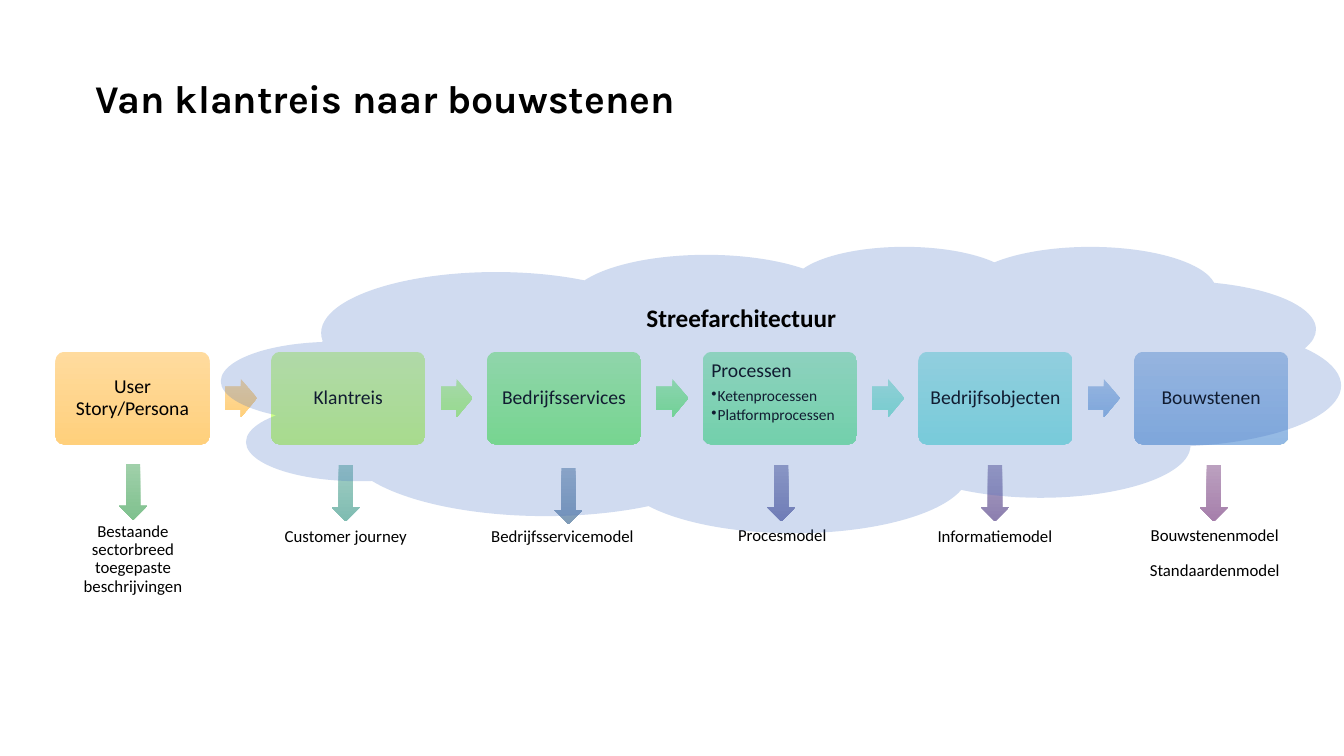
from dataclasses import dataclass

from lxml.etree import SubElement
from pptx import Presentation
from pptx.dml.color import RGBColor
from pptx.enum.shapes import MSO_SHAPE as Preset
from pptx.enum.text import MSO_ANCHOR as Anchor, MSO_AUTO_SIZE as AutoSize, PP_ALIGN as Align
from pptx.oxml.ns import qn
from pptx.util import Pt

BLACK = RGBColor(0x00, 0x00, 0x00)
CLOUD_BLUE = RGBColor(0x44, 0x72, 0xC4)
ORANGE = (RGBColor(0xFF, 0xDB, 0x9E), RGBColor(0xFF, 0xD0, 0x7C))
LIME = (RGBColor(0xD5, 0xFC, 0x9F), RGBColor(0xCA, 0xFF, 0x7D))
LIME_GREEN = (RGBColor(0xC6, 0xFB, 0xA0), RGBColor(0xB4, 0xFD, 0x7D))
GREEN = (RGBColor(0xA9, 0xF7, 0xA2), RGBColor(0x89, 0xF7, 0x80))
SPRING = (RGBColor(0xA4, 0xF4, 0xA9), RGBColor(0x82, 0xF3, 0x88))
MINT = (RGBColor(0xA6, 0xF2, 0xBC), RGBColor(0x84, 0xF0, 0xA4))
AQUA = (RGBColor(0xAA, 0xEE, 0xDD), RGBColor(0x89, 0xEB, 0xD3))
TURQUOISE = (RGBColor(0xAB, 0xED, 0xE7), RGBColor(0x8B, 0xEA, 0xE2))
BLUE = (RGBColor(0xB1, 0xCB, 0xE9), RGBColor(0x93, 0xB9, 0xE4))
MOSS = (RGBColor(0xA0, 0xD0, 0xAA), RGBColor(0x7F, 0xC1, 0x8E))
SEA = (RGBColor(0xA0, 0xCD, 0xC4), RGBColor(0x7F, 0xBC, 0xB1))
STEEL = (RGBColor(0xA0, 0xB4, 0xC9), RGBColor(0x7F, 0x9B, 0xB7))
INDIGO = (RGBColor(0xA0, 0xA2, 0xC5), RGBColor(0x7F, 0x81, 0xB3))
LAVENDER = (RGBColor(0xA9, 0xA0, 0xC2), RGBColor(0x8C, 0x7F, 0xAF))
MAUVE = (RGBColor(0xBB, 0xA0, 0xBF), RGBColor(0xA6, 0x7F, 0xAB))

BODY_FONT = {"name": "Calibri", "size": Pt(14), "bold": False, "color": BLACK}
BULLET_FONT = BODY_FONT | {"size": Pt(11)}
LABEL_FONT = BODY_FONT | {"size": Pt(12)}
CLOUD_FONT = BODY_FONT | {"size": Pt(18), "bold": True}
TITLE_FONT = {"name": "Karla", "size": Pt(28), "bold": True, "color": BLACK}
CENTERED = {"alignment": Align.CENTER, "line_spacing": 0.9}
LEFT = {"alignment": Align.LEFT, "line_spacing": 0.9}


@dataclass
class Stage:
    name: str
    color: tuple
    labels: list
    down_color: tuple
    down_offset: tuple
    label_offset: tuple
    next_color: tuple = None
    bullets: tuple = ()


STAGES = [
    Stage("User Story/Persona", ORANGE, ["Bestaande sectorbreed toegepaste beschrijvingen"],
          MOSS, (45.4, 80), (4.3, 122.5), ORANGE),
    Stage("Klantreis", LIME, ["Customer journey"], SEA, (43.2, 81), (2.2, 126), LIME_GREEN),
    Stage("Bedrijfsservices", GREEN, ["Bedrijfsservicemodel"], STEEL, (48.2, 83), (2.9, 126), SPRING),
    Stage("Processen", MINT, ["Procesmodel"], INDIGO, (46.1, 81), (5.8, 125.5), AQUA,
          ("Ketenprocessen", "Platformprocessen")),
    Stage("Bedrijfsobjecten", TURQUOISE, ["Informatiemodel"], LAVENDER, (44.6, 81), (3.6, 126), BLUE),
    Stage("Bouwstenen", BLUE, ["Bouwstenenmodel", "Standaardenmodel"], MAUVE, (46.8, 81), (6.5, 125.5)),
]


def apply_format(target, values):
    for name, value in values.items():
        setattr(target, name, value)


def format_frame(frame, inset, anchor):
    margins = {f"margin_{side}": Pt(inset) for side in ("left", "top", "right", "bottom")}
    apply_format(frame, margins | {"word_wrap": True, "auto_size": AutoSize.NONE, "vertical_anchor": anchor})


def write_paragraph(paragraph, text, layout, font):
    paragraph.text = text
    apply_format(paragraph, layout)
    apply_format(paragraph.font, {name: value for name, value in font.items() if name != "color"})
    paragraph.font.color.rgb = font["color"]


def add_preset(slide, preset, left, top, width, height):
    shape = slide.shapes.add_shape(preset, Pt(left), Pt(top), Pt(width), Pt(height))
    shape.shadow.inherit = False
    shape.line.fill.background()
    return shape


def fill_gradient(shape, colors):
    shape.fill.gradient()
    shape.fill.gradient_angle = 270
    for stop, color in zip(shape.fill.gradient_stops, colors):
        stop.color.rgb = color


def add_bullet(paragraph):
    properties = paragraph._p.get_or_add_pPr()
    properties.set("marL", str(Pt(4.5)))
    properties.set("indent", str(-Pt(4.5)))
    SubElement(properties, qn("a:buChar"), char="•")


def place_title(slide, left, top, width, height):
    title = slide.shapes.title
    apply_format(title, {"left": Pt(left), "top": Pt(top), "width": Pt(width), "height": Pt(height)})
    format_frame(title.text_frame, 0, Anchor.TOP)
    write_paragraph(title.text_frame.paragraphs[0], "Van klantreis naar bouwstenen", LEFT, TITLE_FONT)


def add_stage_box(slide, stage, left, top, width, height):
    box = add_preset(slide, Preset.ROUNDED_RECTANGLE, left, top, width, height)
    box.adjustments[0] = 0.1
    fill_gradient(box, stage.color)
    frame = box.text_frame
    format_frame(frame, 4.25, Anchor.TOP if stage.bullets else Anchor.MIDDLE)
    layout = LEFT | {"space_after": Pt(5)} if stage.bullets else CENTERED
    write_paragraph(frame.paragraphs[0], stage.name, layout, BODY_FONT)
    for text in stage.bullets:
        paragraph = frame.add_paragraph()
        add_bullet(paragraph)
        write_paragraph(paragraph, text, LEFT | {"space_after": Pt(1.65)}, BULLET_FONT)


def add_stage(slide, stage, left, top, width, height):
    add_stage_box(slide, stage, left, top, width, height)
    if stage.next_color:
        arrow = add_preset(slide, Preset.RIGHT_ARROW, left + width + 10.75, top + 19.5, 23, 27.4)
        arrow.adjustments[0] = 0.6
        fill_gradient(arrow, stage.next_color)

    down_left, down_top = stage.down_offset
    down_arrow = add_preset(slide, Preset.DOWN_ARROW, left + down_left, top + down_top, 20.2, 40.3)
    fill_gradient(down_arrow, stage.down_color)

    label_left, label_top = stage.label_offset
    label = slide.shapes.add_textbox(Pt(left + label_left), Pt(top + label_top), Pt(102.2), Pt(36))
    frame = label.text_frame
    format_frame(frame, 0, Anchor.TOP)
    for index, text in enumerate(stage.labels):
        paragraph = frame.add_paragraph() if index else frame.paragraphs[0]
        spacing = {"space_before": Pt(6 if index else 0), "space_after": Pt(6)}
        write_paragraph(paragraph, text, CENTERED | spacing, LABEL_FONT)


def add_cloud(slide, left, top, width, height):
    cloud = add_preset(slide, Preset.CLOUD, left, top, width, height)
    cloud.fill.solid()
    cloud.fill.fore_color.rgb = CLOUD_BLUE
    color = cloud._element.spPr.find(qn("a:solidFill")).find(qn("a:srgbClr"))
    SubElement(color, qn("a:alpha"), val="25000")
    format_frame(cloud.text_frame, 11.5, Anchor.TOP)
    write_paragraph(cloud.text_frame.paragraphs[0], "Streefarchitectuur", CENTERED, CLOUD_FONT)


def build_journey_slide(presentation):
    slide = presentation.slides.add_slide(presentation.slide_layouts[5])
    place_title(slide, 68.4, 56.9, 835.2, 26.6)
    for index, stage in enumerate(STAGES):
        add_stage(slide, stage, 39.6 + index * 154.1, 251.2, 110.2, 66.3)
    add_cloud(slide, 158.4, 175.7, 799.2, 204.5)


def main():
    presentation = Presentation()
    apply_format(presentation, {"slide_width": Pt(960), "slide_height": Pt(540)})
    build_journey_slide(presentation)
    presentation.save("out.pptx")


if __name__ == "__main__":
    main()
